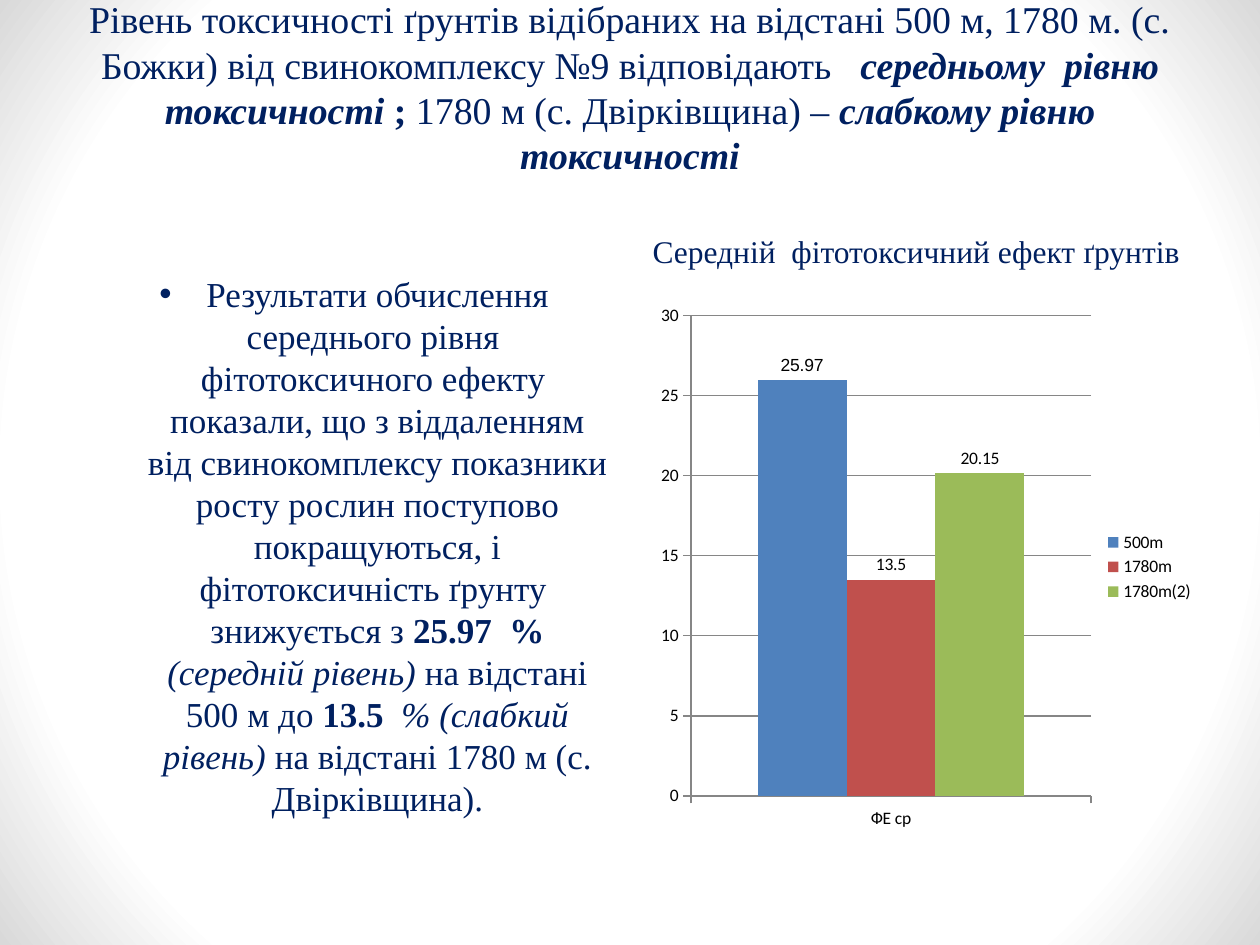
"""Build a slide on soil toxicity with a list and a clustered column chart."""
from dataclasses import dataclass
from typing import Any, NamedTuple

from pptx import Presentation
from pptx.chart.data import CategoryChartData
from pptx.dml.color import RGBColor
from pptx.enum.chart import XL_CHART_TYPE, XL_LABEL_POSITION, XL_LEGEND_POSITION, XL_TICK_MARK
from pptx.enum.shapes import MSO_SHAPE
from pptx.enum.text import MSO_ANCHOR, MSO_AUTO_SIZE, PP_ALIGN
from pptx.oxml import parse_xml
from pptx.oxml.ns import nsdecls
from pptx.util import Emu, Pt


@dataclass(frozen=True)
class Theme:
    """Colours, fonts and type sizes of the slide."""

    ink: str = "002060"
    black: str = "000000"
    grid: str = "868686"
    center: str = "FFFFFF"
    edge: str = "D9D9D9"
    text_font: str = "Times New Roman"
    chart_font: str = "Calibri"
    accent_font: str = "Arial"
    title_size: float = 21.6
    body_size: float = 20
    heading_size: float = 18
    chart_size: float = 10


class Box(NamedTuple):
    """Position and size in px."""

    left: int
    top: int
    width: int
    height: int


class Span(NamedTuple):
    """Stretch of text with its weight and slant."""

    text: str
    bold: bool = False
    italic: bool = False


class Column(NamedTuple):
    """One chart series with a single value."""

    name: str
    value: float
    color: str


class TextBlock(NamedTuple):
    """Content and format of one placeholder."""

    index: int
    box: Box
    size: float
    spans: list[Span]
    frame: dict[str, Any]
    alignment: PP_ALIGN
    hanging: int = 0


THEME = Theme()
SLIDE = Box(0, 0, 1260, 945)
CHART = Box(650, 295, 557, 544)
COLUMNS = [
    Column("500m", 25.97, "4F81BD"),
    Column("1780m", 13.5, "C0504D"),
    Column("1780m(2)", 20.15, "9BBB59"),
]


def px(length: int) -> Emu:
    """Turn px into EMU."""
    return Emu(round(length * 914400 / 126))


BLOCKS = [
    TextBlock(0, Box(63, 21, 1134, 176), THEME.title_size, [
        Span("Рівень токсичності ґрунтів відібраних на відстані 500 м, 1780 м. (с. Божки) "
             "від свинокомплексу №9 відповідають   "),
        Span("середньому  рівню токсичності ", True, True),
        Span("; ", True),
        Span("1780 м (с. Двірківщина) – "),
        Span("слабкому рівню токсичності", True, True),
    ], {"vertical_anchor": MSO_ANCHOR.MIDDLE, "margin_bottom": px(51)}, PP_ALIGN.CENTER),
    TextBlock(2, Box(88, 266, 532, 578), THEME.body_size, [
        Span("Результати обчислення середнього рівня  фітотоксичного ефекту  показали, "
             "що з віддаленням від свинокомплексу показники росту рослин поступово "
             "покращуються, і фітотоксичність ґрунту  знижується з "),
        Span("25.97  % ", True),
        Span("(середній рівень) ", italic=True),
        Span("на відстані 500 м до "),
        Span("13.5  ", True),
        Span("% (слабкий рівень) ", italic=True),
        Span("на відстані 1780 м (с. Двірківщина)."),
    ], {"vertical_anchor": MSO_ANCHOR.TOP}, PP_ALIGN.CENTER, 47),
    TextBlock(3, Box(640, 212, 557, 64), THEME.heading_size,
              [Span("Середній  фітотоксичний ефект ґрунтів")],
              {"vertical_anchor": MSO_ANCHOR.BOTTOM}, PP_ALIGN.LEFT),
]


def apply(target: Any, values: dict[str, Any]) -> None:
    """Set every attribute named in values."""
    for name, value in values.items():
        setattr(target, name, value)


def place(shape: Any, box: Box) -> None:
    """Move and size a shape."""
    apply(shape, {name: px(length) for name, length in box._asdict().items()})


def style_font(font: Any, name: str, size: float, color: str, **values: Any) -> None:
    """Format a font."""
    apply(font, {"name": name, "size": Pt(size), **values})
    font.color.rgb = RGBColor.from_string(color)


def draw_backdrop(slide: Any) -> None:
    """Draw the radial gradient behind everything else."""
    shape = slide.shapes.add_shape(MSO_SHAPE.RECTANGLE, *map(px, SLIDE))
    shape.shadow.inherit = False
    shape.line.fill.background()
    shape.fill.solid()
    properties = shape.element.spPr
    stops = "".join(
        f'<a:gs pos="{position}"><a:srgbClr val="{color}"/></a:gs>'
        for position, color in ((79000, THEME.center), (100000, THEME.edge))
    )
    gradient = parse_xml(
        f'<a:gradFill {nsdecls("a")} rotWithShape="1"><a:gsLst>{stops}</a:gsLst>'
        '<a:path path="circle"><a:fillToRect l="50000" t="50000" r="50000" b="50000"/>'
        '</a:path></a:gradFill>'
    )
    properties.replace(properties.solidFill, gradient)
    slide.shapes.element.insert(2, shape.element)


def draw_text(slide: Any, block: TextBlock) -> None:
    """Fill one placeholder with formatted text."""
    shape = slide.placeholders[block.index]
    place(shape, block.box)
    apply(shape.text_frame, {"word_wrap": True, "auto_size": MSO_AUTO_SIZE.NONE, **block.frame})
    paragraph = shape.text_frame.paragraphs[0]
    apply(paragraph, {"alignment": block.alignment, "space_before": Pt(0)})
    properties = paragraph._p.get_or_add_pPr()
    properties.set("marL", str(px(block.hanging)))
    properties.set("indent", str(-px(block.hanging)))
    bullet = '<a:buChar {} char="•"/>' if block.hanging else "<a:buNone {}/>"
    properties.append(parse_xml(bullet.format(nsdecls("a"))))
    for span in block.spans:
        run = paragraph.add_run()
        run.text = span.text
        style_font(run.font, THEME.text_font, block.size, THEME.ink,
                   bold=span.bold, italic=span.italic)


def draw_chart(slide: Any) -> None:
    """Draw the column chart with its labels and legend."""
    data = CategoryChartData()
    data.categories = ["ФЕ ср"]
    for column in COLUMNS:
        data.add_series(column.name, [column.value])
    chart = slide.shapes.add_chart(XL_CHART_TYPE.COLUMN_CLUSTERED, *map(px, CHART), data).chart
    apply(chart, {"has_title": False, "has_legend": True})
    style_font(chart.font, THEME.chart_font, THEME.chart_size, THEME.black)
    apply(chart.legend, {"position": XL_LEGEND_POSITION.RIGHT, "include_in_layout": False})
    apply(chart.value_axis, {"minimum_scale": 0, "maximum_scale": 30, "major_unit": 5,
                             "has_major_gridlines": True})
    axes = (chart.category_axis, chart.value_axis)
    for axis in axes:
        axis.major_tick_mark = XL_TICK_MARK.OUTSIDE
    for line_format in [axis.format for axis in axes] + [chart.value_axis.major_gridlines.format]:
        line_format.line.width = Pt(0.75)
        line_format.line.color.rgb = RGBColor.from_string(THEME.grid)
    plot = chart.plots[0]
    apply(plot, {"gap_width": 150, "overlap": 0, "vary_by_categories": False})
    for position, (series, column) in enumerate(zip(plot.series, COLUMNS)):
        series.format.fill.solid()
        series.format.fill.fore_color.rgb = RGBColor.from_string(column.color)
        if position == 0:
            labels, font_name = series.points[0].data_label, THEME.accent_font
        else:
            labels, font_name = series.data_labels, THEME.chart_font
            labels.show_value = True
        style_font(labels.font, font_name, THEME.chart_size, THEME.black)
        labels.position = XL_LABEL_POSITION.OUTSIDE_END


def main() -> None:
    """Build and save the presentation."""
    presentation = Presentation()
    apply(presentation, {"slide_width": px(SLIDE.width), "slide_height": px(SLIDE.height)})
    slide = presentation.slides.add_slide(presentation.slide_layouts[4])
    draw_backdrop(slide)
    for block in BLOCKS:
        draw_text(slide, block)
    for index in (1, 4):
        unused = slide.placeholders[index].element
        unused.getparent().remove(unused)
    draw_chart(slide)
    presentation.save("out.pptx")


if __name__ == "__main__":
    main()
